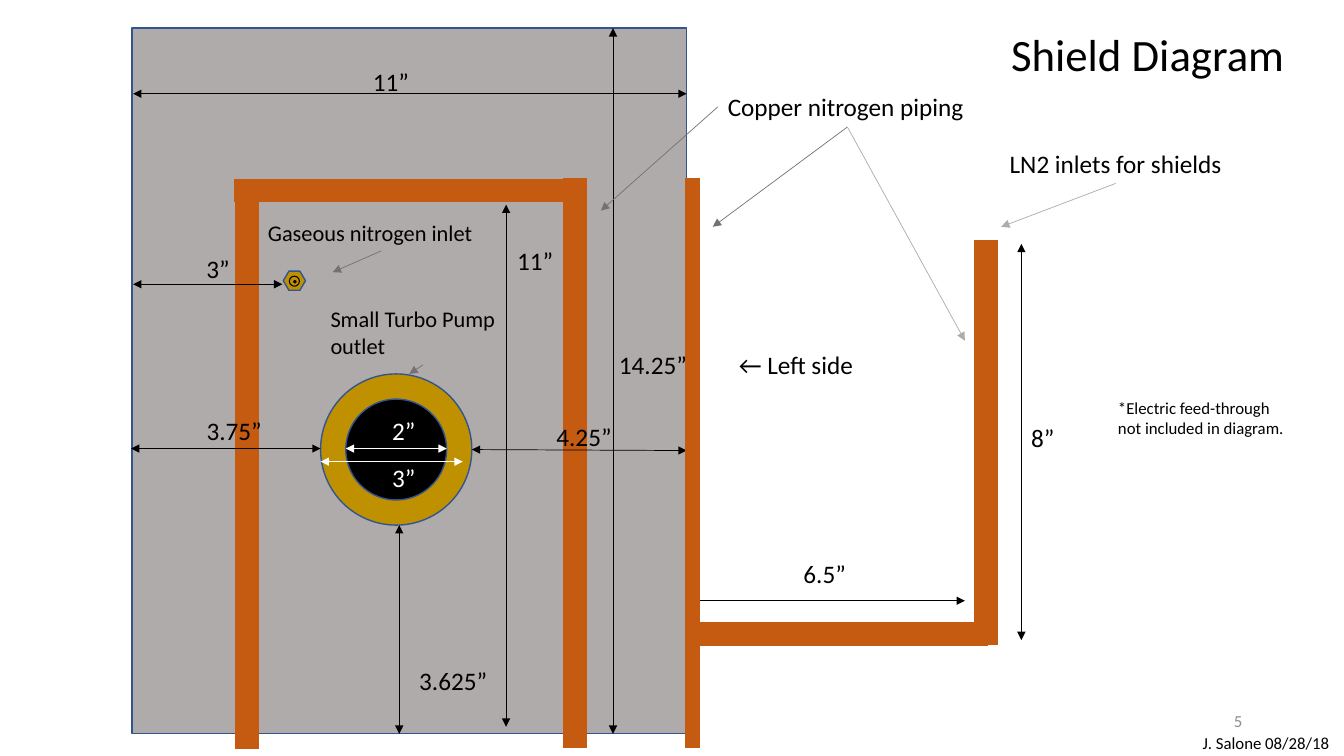
from dataclasses import dataclass

from lxml import etree
from pptx import Presentation
from pptx.dml.color import RGBColor
from pptx.enum.shapes import MSO_CONNECTOR, MSO_SHAPE
from pptx.enum.text import MSO_ANCHOR, MSO_AUTO_SIZE, PP_ALIGN
from pptx.oxml.ns import qn
from pptx.shapes.autoshape import Shape
from pptx.shapes.connector import Connector
from pptx.slide import Slide
from pptx.util import Inches, Pt

STRAIGHT = MSO_CONNECTOR.STRAIGHT
RECTANGLE, OVAL, HEXAGON = MSO_SHAPE.RECTANGLE, MSO_SHAPE.OVAL, MSO_SHAPE.HEXAGON
LEFT, CENTER, RIGHT = PP_ALIGN.LEFT, PP_ALIGN.CENTER, PP_ALIGN.RIGHT
TOP, MIDDLE = MSO_ANCHOR.TOP, MSO_ANCHOR.MIDDLE
FIT_TEXT, FIXED = MSO_AUTO_SIZE.SHAPE_TO_FIT_TEXT, MSO_AUTO_SIZE.NONE
LEFT_SIDE, BOTTOM_SIDE = 1, 2

BLACK = RGBColor(0x00, 0x00, 0x00)
WHITE = RGBColor(0xFF, 0xFF, 0xFF)
STEEL = RGBColor(0xAF, 0xAB, 0xAB)
DARK_GREY = RGBColor(0x76, 0x71, 0x71)
NUMBER_GREY = RGBColor(0x8C, 0x8C, 0x8C)
COPPER = RGBColor(0xC5, 0x5A, 0x11)
BRASS = RGBColor(0xBF, 0x90, 0x00)
OUTLINE = RGBColor(0x32, 0x54, 0x91)
FONT = "Calibri"

Point = tuple[float, float]
Frame = tuple[float, float, float, float]


@dataclass(frozen=True)
class Part:
    kind: MSO_SHAPE
    frame: Frame
    fill: RGBColor
    outline: RGBColor = OUTLINE
    weight: float = 1


@dataclass(frozen=True)
class Pipe:
    start: Point
    end: Point
    weight: float = 17


@dataclass(frozen=True)
class Label:
    text: str
    frame: Frame
    size: float = 18
    color: RGBColor = BLACK
    align: PP_ALIGN = LEFT
    wrap: bool = True
    anchor: MSO_ANCHOR = TOP
    autosize: MSO_AUTO_SIZE = FIT_TEXT


@dataclass(frozen=True)
class Dimension:
    start: Point
    end: Point
    label: Label


@dataclass(frozen=True)
class Leader:
    side: int
    end: Point
    color: RGBColor


@dataclass(frozen=True)
class Callout:
    label: Label
    leaders: tuple[Leader, ...]


PARTS = [
    Part(OVAL, (3.18, 3.71, 1.5, 1.5), BRASS),
    Part(HEXAGON, (2.81, 2.69, 0.22, 0.19), BRASS),
    Part(OVAL, (3.43, 3.96, 1, 1), BLACK),
    Part(OVAL, (2.87, 2.74, 0.1, 0.1), BRASS, BLACK, 0.75),
    Part(OVAL, (2.9, 2.77, 0.05, 0.05), BLACK, BRASS),
]
SHIELD = Part(RECTANGLE, (1.31, 0.28, 5.5, 7), STEEL)
FACE_PIPES = [
    Pipe((2.45, 7.43), (2.45, 1.78)),
    Pipe((5.82, 1.89), (2.32, 1.89)),
    Pipe((5.7, 7.42), (5.7, 1.77)),
]
SIDE_PIPES = [
    Pipe((6.8, 6.29), (9.8, 6.29)),
    Pipe((9.78, 6.4), (9.78, 2.38)),
    Pipe((6.87, 7.42), (6.87, 1.77), 11),
]
DIMENSIONS = [
    Dimension((3.96, 5.21), (3.96, 7.28), Label("3.625”", (4.06, 6.55, 0.9, 0.4))),
    Dimension((3.18, 4.45), (1.3, 4.45), Label("3.75”", (1.95, 4.07, 0.75, 0.4), wrap=False)),
    Dimension((2.8, 2.82), (1.32, 2.82), Label("3”", (1.95, 2.46, 0.43, 0.4), wrap=False)),
    Dimension((1.32, 0.93), (6.81, 0.93), Label("11”", (3.6, 0.61, 0.58, 0.4))),
    Dimension((6.08, 0.28), (6.08, 7.28), Label("14.25”", (6.04, 3.42, 0.89, 0.4))),
    Dimension((4.68, 4.46), (6.81, 4.47), Label("4.25”", (5.42, 4.13, 0.8, 0.4))),
    Dimension((3.43, 4.45), (4.43, 4.45), Label("2”", (3.79, 4.07, 0.49, 0.4), color=WHITE)),
    Dimension((3.18, 4.58), (4.59, 4.58), Label("3”", (3.79, 4.54, 0.49, 0.4), color=WHITE)),
    Dimension((6.82, 5.96), (9.57, 5.96), Label("6.5”", (7.87, 5.49, 0.66, 0.4))),
    Dimension((10.13, 2.42), (10.13, 6.35), Label("8”", (10.13, 4.14, 0.74, 0.4))),
    Dimension((5.02, 2.03), (5.02, 7.21), Label("11”", (5.03, 2.38, 0.67, 0.4))),
]
CALLOUTS = [
    Callout(Label("LN2 inlets for shields", (9.8, 1.42, 2.53, 0.4), align=CENTER),
            (Leader(BOTTOM_SIDE, (9.93, 2.25), STEEL),)),
    Callout(Label("Copper nitrogen piping", (7.12, 0.86, 2.57, 0.4), wrap=False),
            (Leader(BOTTOM_SIDE, (7.07, 2.25), DARK_GREY),
             Leader(LEFT_SIDE, (5.96, 2.09), DARK_GREY),
             Leader(BOTTOM_SIDE, (9.57, 3.38), STEEL))),
    Callout(Label("Small Turbo Pump outlet", (3.18, 2.98, 2.03, 0.64), 16),
            (Leader(BOTTOM_SIDE, (4.06, 3.71), DARK_GREY),)),
    Callout(Label("Gaseous nitrogen inlet", (2.56, 2.12, 2.44, 0.37), 16),
            (Leader(BOTTOM_SIDE, (3.3, 2.7), DARK_GREY),)),
]
NOTES = [
    Label("← Left side", (7.23, 3.42, 1.72, 0.4)),
    Label("*Electric feed-through not included in diagram.", (10.99, 3.9, 1.9, 0.5), 12),
    Label("Shield Diagram", (9.93, 0.22, 2.97, 0.64), 32),
    Label("J. Salone 08/28/18", (11.83, 7.22, 1.5, 0.3), 12),
    Label("5", (9.42, 6.95, 3, 0.4), 12, NUMBER_GREY, RIGHT, anchor=MIDDLE, autosize=FIXED),
]


def add_part(page: Slide, part: Part) -> None:
    shape = page.shapes.add_shape(part.kind, *map(Inches, part.frame))
    shape.shadow.inherit = False
    shape.fill.solid()
    shape.fill.fore_color.rgb = part.fill
    shape.line.color.rgb = part.outline
    shape.line.width = Pt(part.weight)
    if part.kind == HEXAGON:
        shape.adjustments[0] = 0.292


def add_line(page: Slide, start: Point, end: Point, color: RGBColor,
             weight: float = 0.5, arrows: tuple[str, ...] = ()) -> Connector:
    line = page.shapes.add_connector(STRAIGHT, *map(Inches, start + end))
    line.line.color.rgb = color
    line.line.width = Pt(weight)
    for arrow in arrows:
        etree.SubElement(line.line._get_or_add_ln(), qn(f"a:{arrow}"), type="triangle")
    etree.SubElement(line._element.spPr, qn("a:effectLst"))
    return line


def add_label(page: Slide, label: Label) -> Shape:
    box = page.shapes.add_textbox(*map(Inches, label.frame))
    frame = box.text_frame
    frame.word_wrap = label.wrap
    frame.auto_size = label.autosize
    frame.vertical_anchor = label.anchor
    para = frame.paragraphs[0]
    para.alignment = label.align
    span = para.add_run()
    span.text = label.text
    span.font.name = FONT
    span.font.size = Pt(label.size)
    span.font.color.rgb = label.color
    return box


def add_pipes(page: Slide, pipes: list[Pipe]) -> None:
    for pipe in pipes:
        add_line(page, pipe.start, pipe.end, COPPER, pipe.weight)


def add_callout(page: Slide, callout: Callout) -> None:
    box = add_label(page, callout.label)
    for leader in callout.leaders:
        line = add_line(page, callout.label.frame[:2], leader.end, leader.color,
                        arrows=("tailEnd",))
        line.begin_connect(box, leader.side)


def main() -> None:
    deck = Presentation()
    deck.slide_width, deck.slide_height = Inches(13.33), Inches(7.5)
    page = deck.slides.add_slide(deck.slide_layouts[6])

    # Shield plate, its piping and ports
    add_part(page, SHIELD)
    add_pipes(page, FACE_PIPES)
    for part in PARTS:
        add_part(page, part)

    # Measurements, partly covered by the side piping
    for dimension in DIMENSIONS:
        add_line(page, dimension.start, dimension.end, dimension.label.color,
                 arrows=("headEnd", "tailEnd"))
        add_label(page, dimension.label)
    add_pipes(page, SIDE_PIPES)

    # Callouts, title and notes
    for callout in CALLOUTS:
        add_callout(page, callout)
    for note in NOTES:
        add_label(page, note)
    deck.save("out.pptx")


if __name__ == "__main__":
    main()
